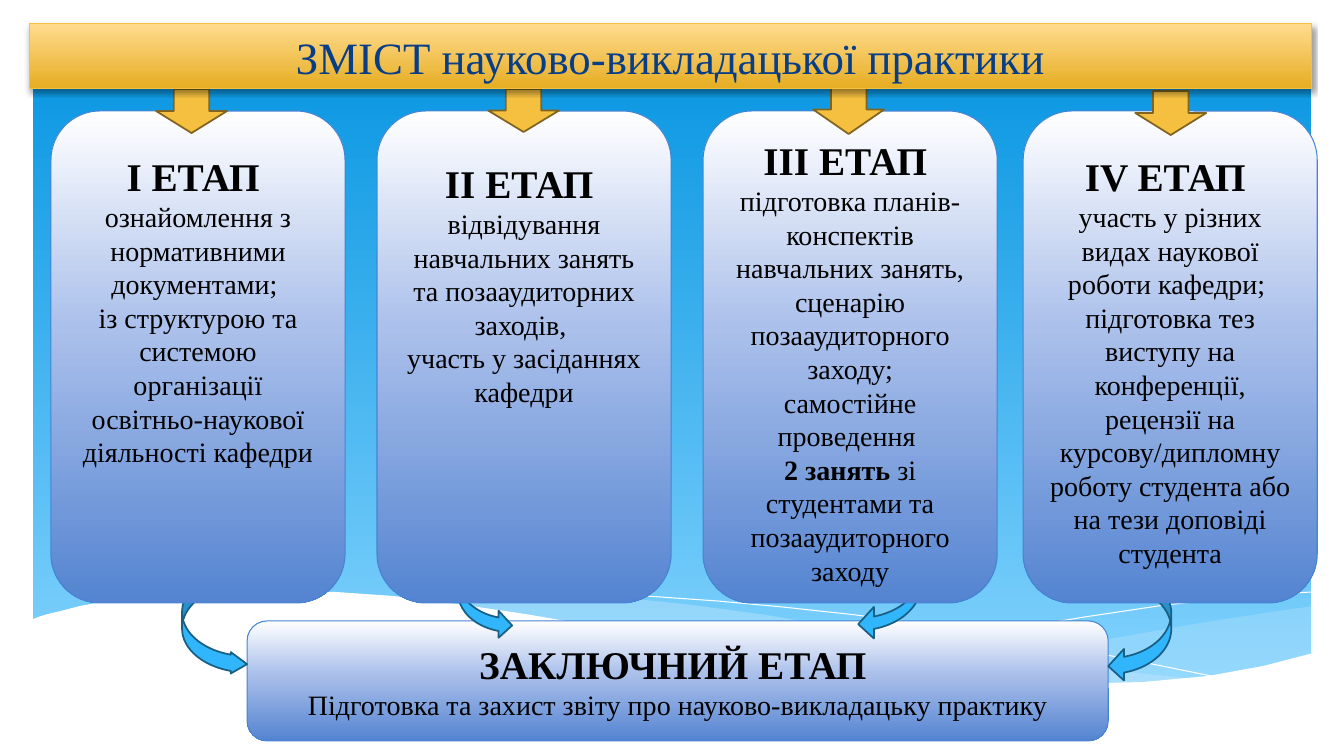
from lxml import etree
from pptx import Presentation, util as u
from pptx.dml.color import RGBColor
from pptx.enum import shapes, text
from pptx.oxml import ns

PX = 9071
FONT = "Times New Roman"
KIND = shapes.MSO_SHAPE

SKY = [(0, "0293E0"), (100, "83D3FE")]
CARD = [(0, "FFFFFF"), (44, "ABC0EB"), (100, "5484D1")]
GOLD = [(0, "FFDB8E"), (100, "E6AD22")]

TITLE = [[("ЗМІСТ науково-викладацької практики", 32, False)]]
FINAL = [
    [("ЗАКЛЮЧНИЙ ЕТАП ", 28, True)],
    [("Підготовка та захист звіту про науково-викладацьку практику", 20, False)],
]
STAGES = [
    (51, 27, "І ЕТАП ", [
        [("ознайомлення з нормативними документами; ", 20, False)],
        [("із структурою та системою організації освітньо-наукової "
          "діяльності кафедри", 20, False)]]),
    (1023, 27, "ІV ЕТАП ", [
        [("участь у різних видах наукової роботи кафедри; ", 20, False)],
        [("підготовка тез виступу на конференції, рецензії на курсову/дипломну "
          "роботу студента або на тези доповіді студента", 20, False)]]),
    (377, 34, "ІІ ЕТАП ", [
        [("відвідування навчальних занять та позааудиторних заходів, ", 20, False)],
        [("участь у засіданнях кафедри", 20, False)]]),
    (703, 11, "ІІІ ЕТАП ", [
        [("підготовка планів-конспектів навчальних занять, сценарію "
          "позааудиторного заходу;", 20, False)],
        [("самостійне проведення ", 20, False)],
        [("2 занять ", 20, True),
         ("зі студентами та позааудиторного заходу", 20, False)]]),
]
CURVES = [
    (KIND.CURVED_RIGHT_ARROW, (182, 568, 65, 107), [0.25, 0.33, 0.25]),
    (KIND.CURVED_LEFT_ARROW, (1108, 568, 63, 114), []),
    (KIND.CURVED_RIGHT_ARROW, (458, 540, 54, 99), []),
    (KIND.CURVED_LEFT_ARROW, (858, 526, 63, 114), [0.197, 0.5, 0.25]),
]
DROPS = [(156, 89, 44), (488, 89, 43), (813, 85, 49), (1135, 91, 44)]

WAVES = [
    ("C6E7FC", 29, [
        (1313, 606), (1258, 614), (1200, 623), (1120, 637), (1014, 655),
        (950, 664), (890, 672), (949, 678), (1018, 683), (1095, 685),
        (1161, 682), (1219, 676), (1268, 666), (1313, 654)]),
    ("C6E7FC", 40, [
        (1202, 680), (1127, 672), (1043, 661), (950, 647), (847, 629),
        (766, 615), (692, 605), (625, 598), (565, 594), (511, 593),
        (442, 594), (385, 598), (461, 606), (544, 618), (605, 629),
        (713, 647), (809, 662), (895, 673), (972, 681), (1040, 684),
        (1115, 685), (1166, 683)]),
    (None, 100, [
        (416, 602), (448, 598), (504, 595), (561, 594), (631, 595),
        (717, 601), (782, 607), (856, 615), (935, 626), (1023, 640),
        (1117, 657), (1221, 678)]),
    (None, 100, [
        (826, 664), (878, 653), (935, 642), (1006, 630), (1085, 617),
        (1165, 605), (1225, 599), (1279, 594), (1312, 592)]),
    ("FFFFFF", 100, [
        (1313, 653), (1263, 666), (1208, 676), (1143, 682), (1066, 684),
        (977, 681), (898, 672), (810, 661), (712, 646), (601, 627),
        (525, 614), (457, 604), (393, 596), (336, 592), (284, 591),
        (237, 591), (196, 592), (159, 594), (128, 598), (102, 602),
        (80, 606), (61, 611), (48, 614), (38, 617), (31, 620),
        (31, 737), (1313, 737)]),
]


def tint(code):
    return RGBColor.from_string(code)


def node(root, tag, **attrs):
    return etree.SubElement(root, ns.qn(tag), {k: str(v) for k, v in attrs.items()})


def shade(shape, stops):
    shape.fill.gradient()
    shape.fill.gradient_angle = 270
    group = shape._element.spPr.find(ns.qn("a:gradFill")).find(ns.qn("a:gsLst"))
    for old in list(group):
        group.remove(old)
    for pos, code in stops:
        node(node(group, "a:gs", pos=pos * 1000), "a:srgbClr", val=code)


def edge(shape, code, width):
    if code:
        shape.line.color.rgb = tint(code)
        shape.line.width = u.Pt(width)
    else:
        shape.line.fill.background()


def draw(kind, box, fill, line=None, width=0.75, adj=()):
    shape = slide.shapes.add_shape(kind, *(n * PX for n in box))
    shape.shadow.inherit = False
    for i, val in enumerate(adj):
        shape.adjustments[i] = val
    if isinstance(fill, list):
        shade(shape, fill)
    else:
        shape.fill.solid()
        shape.fill.fore_color.rgb = tint(fill)
    edge(shape, line, width)
    return shape


def wave(code, alpha, dots):
    path = slide.shapes.build_freeform(*dots[0], scale=PX)
    path.add_line_segments(dots[1:], close=code is not None)
    shape = path.convert_to_shape()
    shape.shadow.inherit = False
    if code is None:
        shape.fill.background()
        edge(shape, "FFFFFF", 0)
        return
    shape.fill.solid()
    shape.fill.fore_color.rgb = tint(code)
    edge(shape, None, 0)
    if alpha < 100:
        color = shape._element.spPr.find(ns.qn("a:solidFill"))[0]
        node(color, "a:alpha", val=alpha * 1000)


def write(shape, paras, code="000000", top=None):
    frame = shape.text_frame
    frame.word_wrap = True
    frame.vertical_anchor = text.MSO_ANCHOR.MIDDLE
    if top is not None:
        frame.vertical_anchor = text.MSO_ANCHOR.TOP
        frame.margin_top = top * PX
    for i, runs in enumerate(paras):
        para = frame.add_paragraph() if i else frame.paragraphs[0]
        para.alignment = text.PP_ALIGN.CENTER
        for words, size, bold in runs:
            run = para.add_run()
            run.text = words
            run.font.name = FONT
            run.font.size = u.Pt(size)
            run.font.bold = bold
            run.font.color.rgb = tint(code)


deck = Presentation()
deck.slide_width = u.Inches(13.33)
deck.slide_height = u.Inches(7.5)
slide = deck.slides.add_slide(deck.slide_layouts[6])

draw(KIND.ROUNDED_RECTANGLE, (33, 25, 1278, 665), SKY, adj=[0.01])
for item in WAVES:
    wave(*item)

final = draw(KIND.ROUNDED_RECTANGLE, (247, 621, 861, 120), CARD, "4584D3")
write(final, FINAL)

for (left, top, head, body), (kind, box, adj) in zip(STAGES, CURVES):
    draw(kind, box, "31B6FD", "195F84", 1.25, adj)
    card = draw(KIND.ROUNDED_RECTANGLE, (left, 111, 294, 492), CARD, "4584D3")
    write(card, [[(head, 28, True)]] + body, top=top)

for left, top, high in DROPS:
    draw(KIND.DOWN_ARROW, (left, top, 71, high), "F5C040", "806421", 1.25)

title = draw(KIND.RECTANGLE, (30, 24, 1281, 65), GOLD, "F5C040")
write(title, TITLE, "073E87")
glow = node(title._element.spPr.find(ns.qn("a:effectLst")), "a:outerShdw",
            blurRad=u.Pt(4), dist=u.Pt(2), dir=5400000, rotWithShape=0)
node(node(glow, "a:srgbClr", val="000000"), "a:alpha", val=38000)

deck.save("out.pptx")
